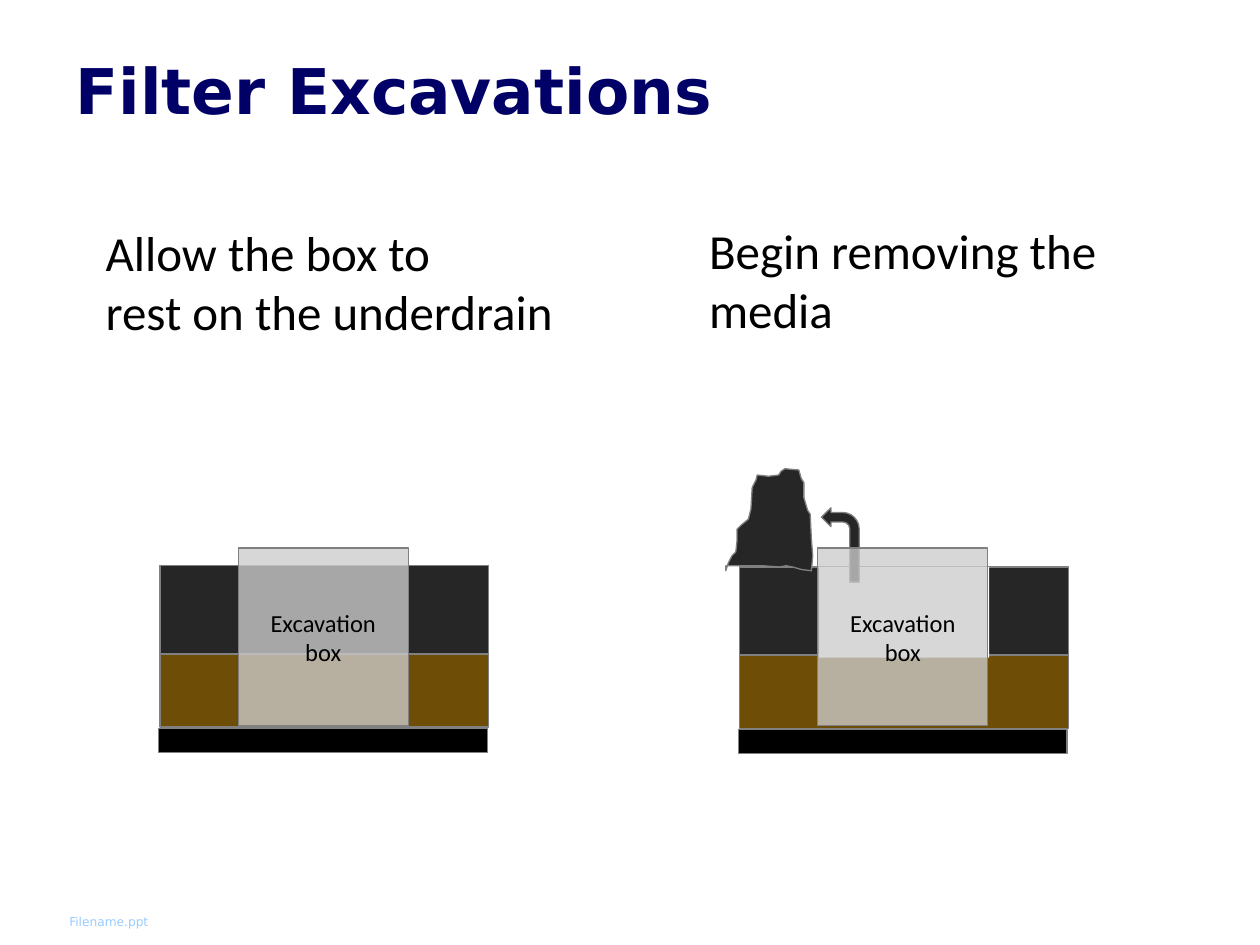
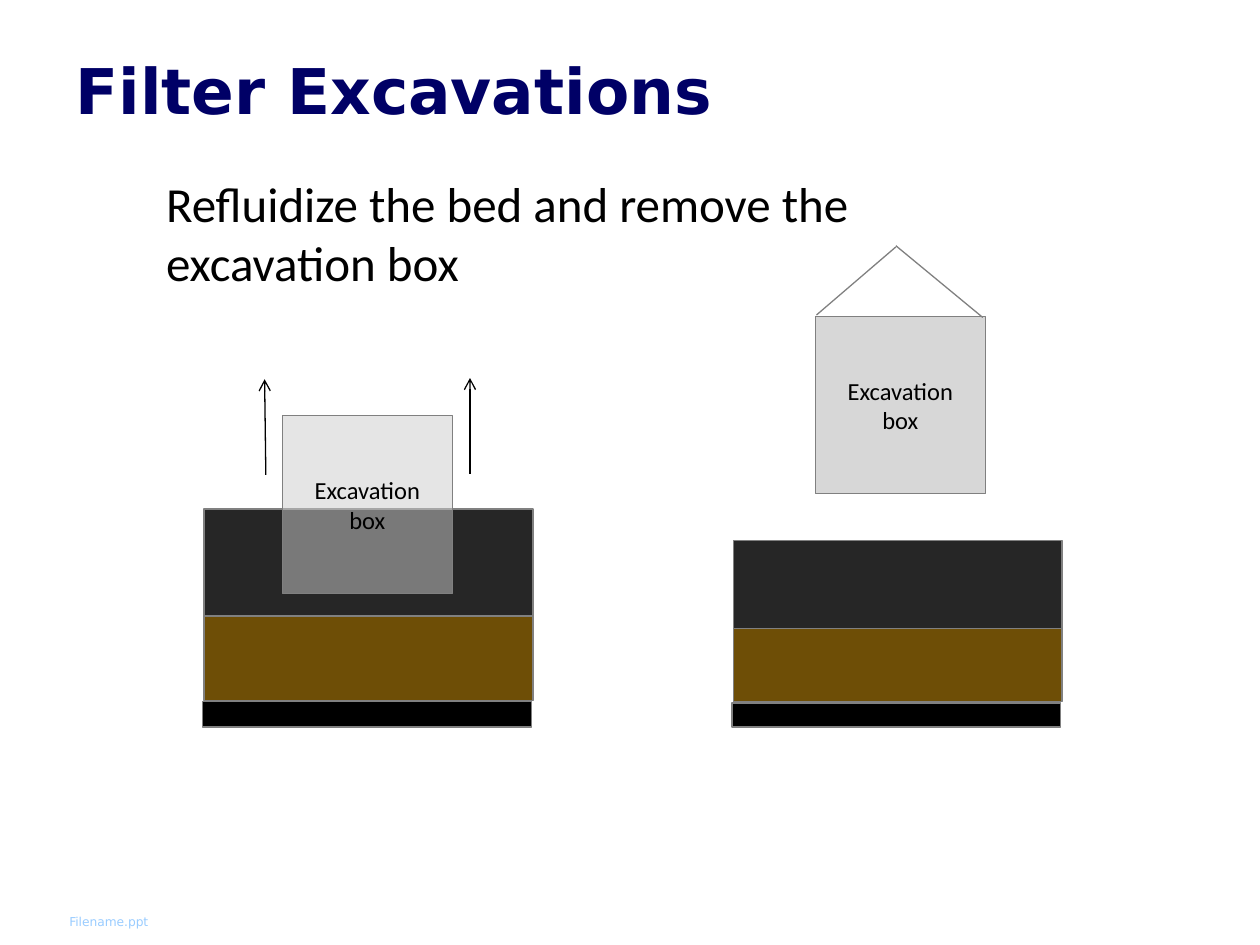
from lxml.etree import SubElement
from pptx import Presentation
from pptx.dml.color import RGBColor
from pptx.enum.shapes import MSO_CONNECTOR, MSO_SHAPE
from pptx.enum.text import MSO_ANCHOR, MSO_AUTO_SIZE, PP_ALIGN
from pptx.oxml.ns import qn
from pptx.util import Inches, Pt

TITLE = "Filter Excavations"
FOOTER = "Filename.ppt"
BOX_LABEL = "Excavation box"
HEAD_FONT, BODY_FONT = "DejaVu Sans", "Calibri"
NAVY, SKY, BLACK, WHITE = "000066", "99CCFF", "000000", "FFFFFF"
COAL, SAND, GLASS, EDGE = "262626", "6E4E06", "CCCCCC", "808080"

BED_W, BOX_W, BOX_H = 2.61, 1.35, 1.41
OVERLAP, BASE_GAP, BASE_SHIFT = 0.02, 0.01, 0.01

PILE = [
    (5.76, 4.49), (5.76, 4.53), (5.78, 4.47), (5.81, 4.41), (5.84, 4.38),
    (5.85, 4.29), (5.85, 4.2), (5.88, 4.17), (5.94, 4.12), (5.96, 4.04),
    (5.97, 3.87), (6, 3.81), (6.01, 3.77), (6.1, 3.78), (6.18, 3.77),
    (6.2, 3.74), (6.23, 3.72), (6.34, 3.73), (6.36, 3.8), (6.38, 3.83),
    (6.38, 3.95), (6.41, 4.05), (6.43, 4.08), (6.44, 4.28), (6.45, 4.41),
    (6.44, 4.53), (6.36, 4.52), (6.29, 4.5), (6.24, 4.49), (6.19, 4.5),
    (6.05, 4.49),
]

SLIDES = [
    dict(
        captions=[
            (["Allow the box to", "rest on the underdrain"], (0.74, 1.72, 4.21, 1.04)),
            (["Begin removing the", "media"], (5.53, 1.7, 4.47, 1.04)),
        ],
        beds=[(1.27, 4.49, 0.7, 0.6, 0.19), (5.87, 4.5, 0.7, 0.6, 0.19)],
        dug_out=(6.5, 4.5, BOX_W, 0.72),
        pile=PILE,
        scoop=(6.52, 4.03, 0.3, 0.59),
        boxes=[(1.89, 4.35, 78), (6.49, 4.35, 78)],
    ),
    dict(
        captions=[
            (["Refluidize the bed and remove the excavation box"], (1.22, 1.33, 7.22, 1.04)),
        ],
        beds=[(5.82, 4.29, 0.7, 0.6, 0.19), (1.62, 4.04, 0.85, 0.69, 0.2)],
        boxes=[(6.47, 2.51, 78), (2.24, 3.3, 50)],
        lifts=[((2.11, 3.77), (2.1, 3.01)), ((3.73, 3.76), (3.73, 3))],
        ropes=[((6.48, 2.5), (7.11, 1.96)), ((7.8, 2.52), (7.11, 1.95))],
    ),
]


def rgb(color):
    return RGBColor.from_string(color)


def place(s, at):
    s.left, s.top, s.width, s.height = map(Inches, at)


def write(s, lines, size=28, font=BODY_FONT, color=BLACK, bold=False,
          align=PP_ALIGN.LEFT, anchor=MSO_ANCHOR.TOP, spacing=None, inset=None):
    tf = s.text_frame
    tf.word_wrap = True
    tf.auto_size = MSO_AUTO_SIZE.NONE
    tf.vertical_anchor = anchor
    if inset is not None:
        tf.margin_left = tf.margin_right = tf.margin_top = tf.margin_bottom = Inches(inset)
    for i, line in enumerate(lines):
        p = tf.add_paragraph() if i else tf.paragraphs[0]
        p.alignment = align
        if spacing:
            p.line_spacing = spacing
        r = p.add_run()
        r.text = line
        r.font.size, r.font.name, r.font.bold = Pt(size), font, bold
        r.font.color.rgb = rgb(color)


def add_text(slide, lines, at, **fmt):
    write(slide.shapes.add_textbox(*map(Inches, at)), lines, **fmt)


def paint(s, fill, line=EDGE, alpha=None):
    s.shadow.inherit = False
    s.fill.solid()
    s.fill.fore_color.rgb = rgb(fill)
    if alpha is not None:
        clr = s._element.spPr.find(".//" + qn("a:srgbClr"))
        SubElement(clr, qn("a:alpha")).set("val", str(alpha * 1000))
    if line:
        s.line.color.rgb = rgb(line)
        s.line.width = Pt(0.75)
    else:
        s.line.fill.background()
    return s


def add_block(slide, at, fill, kind=MSO_SHAPE.RECTANGLE, **look):
    return paint(slide.shapes.add_shape(kind, *map(Inches, at)), fill, **look)


def add_bed(slide, left, top, coal_h, sand_h, base_h):
    sand_top = top + coal_h - OVERLAP
    base_top = sand_top + sand_h + BASE_GAP
    add_block(slide, (left, sand_top, BED_W, sand_h), SAND)
    add_block(slide, (left, top, BED_W, coal_h), COAL)
    add_block(slide, (left - BASE_SHIFT, base_top, BED_W, base_h), BLACK)


def add_box(slide, left, top, alpha):
    s = add_block(slide, (left, top, BOX_W, BOX_H), GLASS, alpha=alpha)
    write(s, [BOX_LABEL], size=14, align=PP_ALIGN.CENTER, anchor=MSO_ANCHOR.MIDDLE)


def add_pile(slide, points):
    start, *rest = [(Inches(x), Inches(y)) for x, y in points]
    builder = slide.shapes.build_freeform(*start)
    builder.add_line_segments(rest, close=True)
    paint(builder.convert_to_shape(), COAL)


def add_scoop(slide, at):
    s = add_block(slide, at, COAL, MSO_SHAPE.BENT_ARROW)
    s._element.spPr.find(qn("a:xfrm")).set("flipH", "1")


def add_line(slide, start, end, color, arrow=False):
    c = slide.shapes.add_connector(MSO_CONNECTOR.STRAIGHT, *map(Inches, start + end))
    c.line.color.rgb = rgb(color)
    c.line.width = Pt(0.75)
    if arrow:
        SubElement(c.line._get_or_add_ln(), qn("a:tailEnd")).set("type", "arrow")
    SubElement(c._element.spPr, qn("a:effectLst"))


def add_slide(prs, content):
    slide = prs.slides.add_slide(prs.slide_layouts[5])
    add_text(slide, [FOOTER], (0.5, 7.2, 2.67, 0.22), size=7, font=HEAD_FONT,
             color=SKY, anchor=MSO_ANCHOR.BOTTOM, inset=0.05)
    title = slide.shapes.title
    place(title, (0.5, 0.33, 9, 0.83))
    write(title, [TITLE], size=36, font=HEAD_FONT, color=NAVY, bold=True,
          anchor=MSO_ANCHOR.MIDDLE, spacing=0.9)
    for lines, at in content["captions"]:
        add_text(slide, lines, at)
    for bed in content["beds"]:
        add_bed(slide, *bed)
    if "dug_out" in content:
        add_block(slide, content["dug_out"], WHITE, line=None)
        add_pile(slide, content["pile"])
        add_scoop(slide, content["scoop"])
    for box in content["boxes"]:
        add_box(slide, *box)
    for start, end in content.get("lifts", []):
        add_line(slide, start, end, BLACK, arrow=True)
    for start, end in content.get("ropes", []):
        add_line(slide, start, end, EDGE)


def main():
    prs = Presentation()
    prs.slide_width, prs.slide_height = Inches(10), Inches(7.5)
    for content in SLIDES:
        add_slide(prs, content)
    prs.save("out.pptx")


if __name__ == "__main__":
    main()
